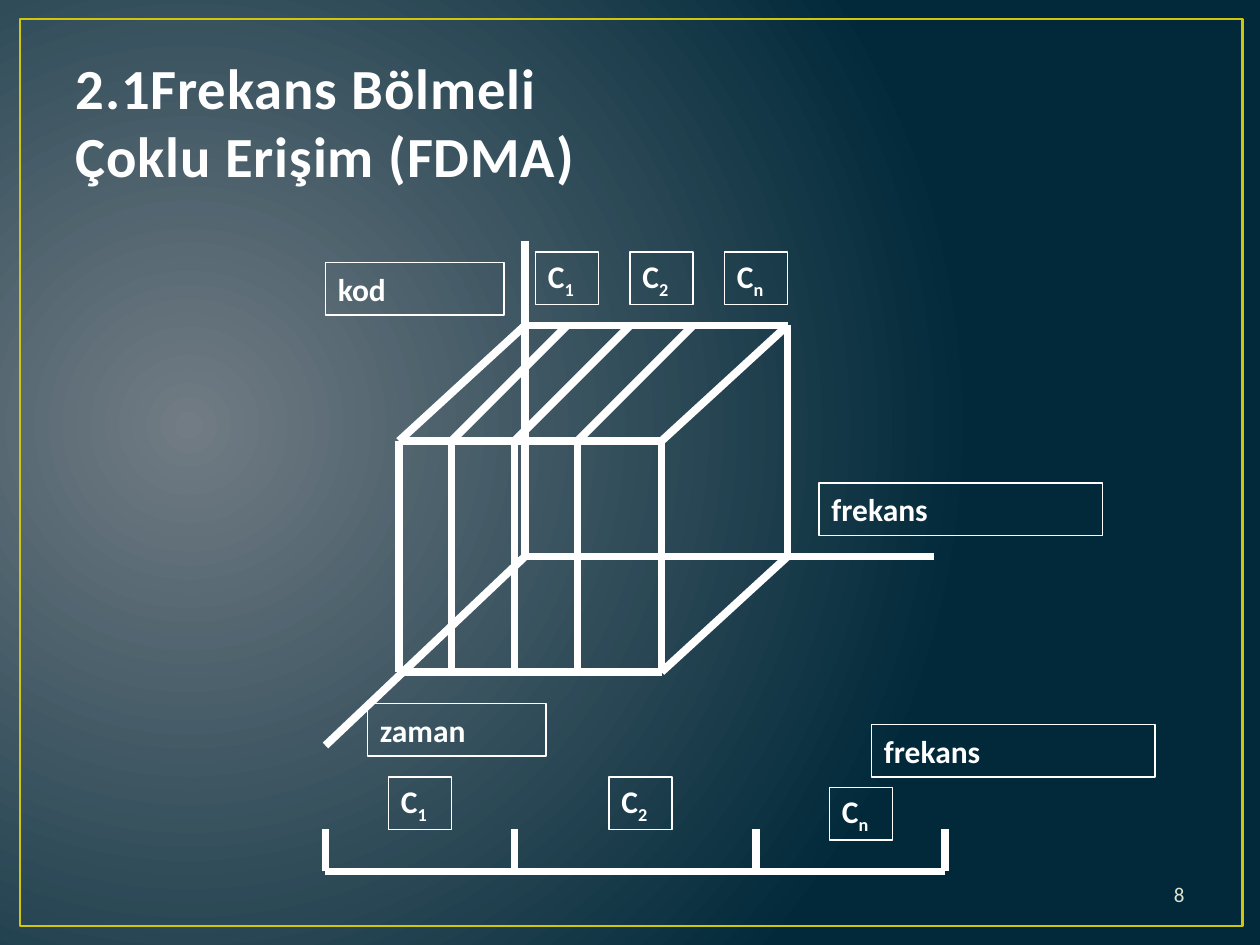
from lxml import etree
from pptx import Presentation
from pptx.dml.color import RGBColor
from pptx.enum.shapes import MSO_CONNECTOR, MSO_SHAPE
from pptx.enum.text import MSO_ANCHOR, PP_ALIGN
from pptx.oxml.ns import qn
from pptx.util import Inches, Pt

RECT = MSO_SHAPE.RECTANGLE
LINE = MSO_CONNECTOR.STRAIGHT
LEFT, RIGHT = PP_ALIGN.LEFT, PP_ALIGN.RIGHT
MIDDLE, BOTTOM = MSO_ANCHOR.MIDDLE, MSO_ANCHOR.BOTTOM

FONT = "Calibri"
COLORS = {
    "glow": "717C84", "deep": "01293A", "frame": "CFC60D", "title": "FEFEFE",
    "edge": "384F55", "ink": "FFFFFF", "page": "DFE6D0",
}
COLS, ROWS = 120, 90  # grid of the whole slide
CELL = Inches(10) // COLS
TAG = 6, 5  # columns and rows of a channel tag


def rgb(name):
    return RGBColor.from_string(COLORS[name])


def span(*cells):
    return [round(n * CELL) for n in cells]


def write(para, text, size, color, bold=False):
    run = para.add_run()
    run.text = text
    font = run.font
    font.name, font.size, font.bold = FONT, Pt(size), bold
    font.color.rgb = rgb(color)
    return run


def stroke(slide, start, end):
    line = slide.shapes.add_connector(LINE, *span(*start, *end))
    line.line.color.rgb = rgb("ink")
    line.line.width = Pt(4.5)
    props = line._element.spPr
    etree.SubElement(props, qn("a:effectLst"))


def outline(slide, box, color, width):
    shape = slide.shapes.add_shape(RECT, *box)
    shape.shadow.inherit = False
    shape.fill.background()
    shape.line.color.rgb = rgb(color)
    shape.line.width = Pt(width)
    return shape


def label(slide, box, text, sub=""):
    """Outlined caption; sub is set as a subscript."""
    frame = outline(slide, span(*box), "ink", 0.75).text_frame
    frame.word_wrap = False
    frame.vertical_anchor = MIDDLE
    para = frame.paragraphs[0]
    para.alignment = LEFT
    write(para, text, 18, "ink", True)
    if sub:
        run = write(para, sub, 18, "ink", True)
        run.font._element.set("baseline", "-25000")


def backdrop(slide):
    """Round gradient glowing from the left, and the frame."""
    fill = slide.background.fill
    fill.gradient()
    for stop, name in zip(fill.gradient_stops, ("glow", "deep")):
        stop.color.rgb = rgb(name)
    grad = next(slide._element.iter(qn("a:gradFill")))
    grad.remove(grad.find(qn("a:lin")))
    round_path = etree.SubElement(grad, qn("a:path"), path="circle")
    etree.SubElement(round_path, qn("a:fillToRect"),
                     l="15000", t="50000", r="85000", b="60000")
    box = [Inches(n) for n in (0.16, 0.15, 9.7, 7.2)]
    outline(slide, box, "frame", 1.5)


def heading(slide, box, lines):
    title = slide.shapes.title
    title.left, title.top, title.width, title.height = span(*box)
    frame = title.text_frame
    frame.word_wrap = True
    frame.vertical_anchor = BOTTOM
    para = frame.paragraphs[0]
    para.alignment = LEFT
    for i, text in enumerate(lines):
        if i:
            para.add_line_break()
        props = write(para, text, 32.4, "title", True).font._element
        props.set("spc", "50")
        edge = etree.Element(qn("a:ln"), w=str(Pt(1.05)))
        solid = etree.SubElement(edge, qn("a:solidFill"))
        etree.SubElement(solid, qn("a:srgbClr"), val=COLORS["edge"])
        props.insert(0, edge)


def cube(slide, box):
    """Code, frequency and time axes with a block cut into channels."""
    x, y, w, h = box
    left, right = x + 19, x + 44
    top, base = y + 8, y + 30
    depth, drop = 12, 11  # shift from back face to front face
    near, far = left - depth, right - depth
    roof, floor = top + drop, base + drop
    edges = [
        ((left, top), (right, top)),
        ((right, top), (right, base)),
        ((left, y), (left, base)),
        ((left, base), (x + w, base)),
        ((left, base), (x, y + h)),
        ((near, roof), (far, roof)),
        ((near, floor), (far, floor)),
        ((near, roof), (near, floor)),
        ((far, roof), (far, floor)),
        ((left, top), (near, roof)),
        ((right, top), (far, roof)),
        ((right, base), (far, floor)),
    ]
    for cut in (near + 5, near + 11, near + 17):
        edges += [((cut, roof), (cut + drop, top)),
                  ((cut, floor), (cut, roof))]
    for start, end in edges:
        stroke(slide, start, end)
    label(slide, (x, y + 2, 17, 5), "kod")
    label(slide, (x + 4, y + 44, 17, 5), "zaman")
    label(slide, (x + 47, y + 23, 27, 5), "frekans")
    for i, sub in enumerate("12n"):
        label(slide, (x + 20 + 9 * i, y + 1, *TAG), "C", sub)


def band(slide, box):
    """Frequency line split by ticks into channels."""
    x, y, w, h = box
    base = y + h
    stroke(slide, (x, base), (x + w, base))
    for tick in (0, 18, 41, w):
        stroke(slide, (x + tick, base), (x + tick, base - 4))
    for i, (sub, lift) in enumerate(zip("12n", (9, 9, 8))):
        label(slide, (x + 6 + 21 * i, base - lift, *TAG), "C", sub)
    label(slide, (x + 52, y, 27, 5), "frekans")


def page(slide, box, text):
    frame = slide.shapes.add_textbox(*span(*box)).text_frame
    frame.word_wrap = True
    frame.vertical_anchor = MIDDLE
    para = frame.paragraphs[0]
    para.alignment = RIGHT
    write(para, text, 12, "page")


def main():
    deck = Presentation()
    deck.slide_width, deck.slide_height = span(COLS, ROWS)
    slide = deck.slides.add_slide(deck.slide_layouts[5])
    backdrop(slide)
    heading(slide, (6, 3.6, 108, 15),
            ("2.1Frekans Bölmeli", "Çoklu Erişim (FDMA)"))
    cube(slide, (31, 23, 58, 48))
    band(slide, (31, 69, 59, 14))
    page(slide, (86, 82.8, 28, 4.8), "8")
    deck.save("out.pptx")


if __name__ == "__main__":
    main()
